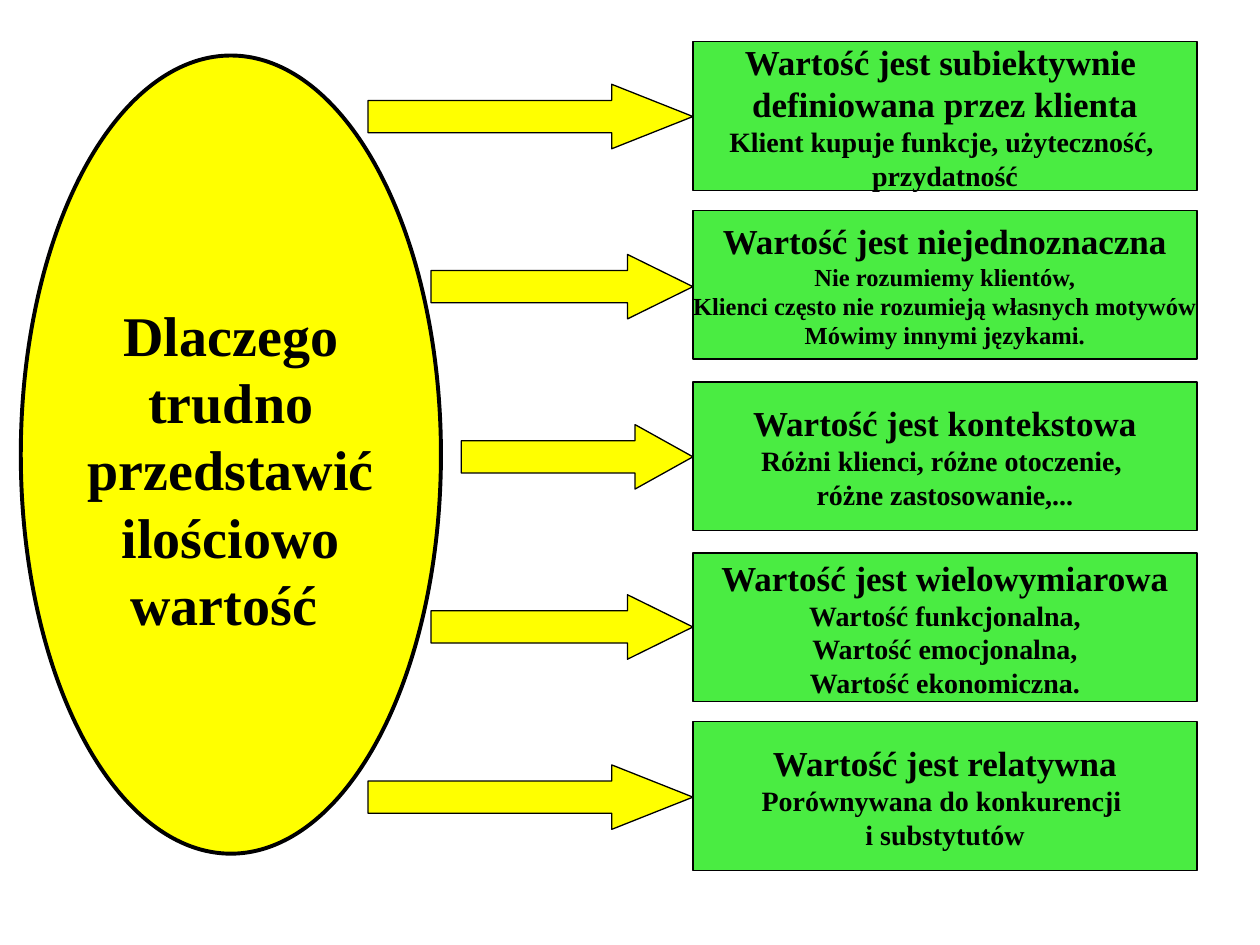
import pptx
import pptx.util
import pptx.dml.color
import pptx.enum.shapes
import pptx.enum.text

Cm = pptx.util.Cm
Pt = pptx.util.Pt
SHAPES = pptx.enum.shapes.MSO_SHAPE
ANCHOR = pptx.enum.text.MSO_ANCHOR


def paint(shape, fill, width):
    shape.shadow.inherit = False
    shape.fill.solid()
    shape.fill.fore_color.rgb = pptx.dml.color.RGBColor.from_string(fill)
    shape.line.color.rgb = pptx.dml.color.RGBColor.from_string("000000")
    shape.line.width = Pt(width)


def write(para, text, size, color="000000"):
    para.alignment = pptx.enum.text.PP_ALIGN.CENTER
    span = para.add_run()
    span.text = text
    span.font.name = "Times New Roman"
    span.font.size = Pt(size)
    span.font.bold = True
    span.font.color.rgb = pptx.dml.color.RGBColor.from_string(color)


deck = pptx.Presentation()
deck.slide_width = Cm(25.4)
deck.slide_height = Cm(19.05)
page = deck.slides.add_slide(deck.slide_layouts[5])

reasons = [
    (0.84, 7.42, 16, ["Wartość jest subiektywnie ", "definiowana przez klienta"],
     ["Klient kupuje funkcje, użyteczność, ", "przydatność"]),
    (4.24, 8.69, 14, ["Wartość jest niejednoznaczna"],
     ["Nie rozumiemy klientów,", "Klienci często nie rozumieją własnych motywów",
      "Mówimy innymi językami."]),
    (7.7, 9.3, 16, ["Wartość jest kontekstowa"],
     ["Różni klienci, różne otoczenie, ", "różne zastosowanie,..."]),
    (11.15, 8.69, 16, ["Wartość jest wielowymiarowa"],
     ["Wartość funkcjonalna,", "Wartość emocjonalna,", "Wartość ekonomiczna."]),
    (14.55, 7.42, 16, ["Wartość jest relatywna"],
     ["Porównywana do konkurencji ", "i substytutów"]),
]
box_left = 13.97
arrow_height = 1.3

for index, (top, arrow_left, detail_size, headings, details) in enumerate(reasons):
    box = page.shapes.add_shape(SHAPES.RECTANGLE, Cm(box_left), Cm(top), Cm(10.16), Cm(3))
    paint(box, "4AEC42", 0.75)
    frame = box.text_frame
    frame.word_wrap = False
    frame.vertical_anchor = ANCHOR.MIDDLE
    lines = [(text, 20) for text in headings] + [(text, detail_size) for text in details]
    for number, (text, size) in enumerate(lines):
        para = frame.add_paragraph() if number else frame.paragraphs[0]
        write(para, text, size)

    arrow_width = box_left - arrow_left
    arrow = page.shapes.add_shape(SHAPES.RIGHT_ARROW, Cm(arrow_left), Cm(1.7 + 3.43 * index),
                                  Cm(arrow_width), Cm(arrow_height))
    arrow.adjustments[1] = arrow_width / arrow_height / 4
    paint(arrow, "FFFF00", 0.75)

ellipse = page.shapes.add_shape(SHAPES.OVAL, Cm(0.42), Cm(1.12), Cm(8.47), Cm(16.09))
paint(ellipse, "FFFF00", 2.25)

title = page.shapes.title
title.left, title.top, title.width, title.height = Cm(1.48), Cm(3.89), Cm(6.35), Cm(9.07)
title.text_frame.word_wrap = True
title.text_frame.auto_size = pptx.enum.text.MSO_AUTO_SIZE.NONE
title.text_frame.vertical_anchor = ANCHOR.BOTTOM
write(title.text_frame.paragraphs[0], "Dlaczego trudno przedstawić ilościowo wartość ", 32)
ellipse.element.addnext(title.element)

deck.save("out.pptx")
